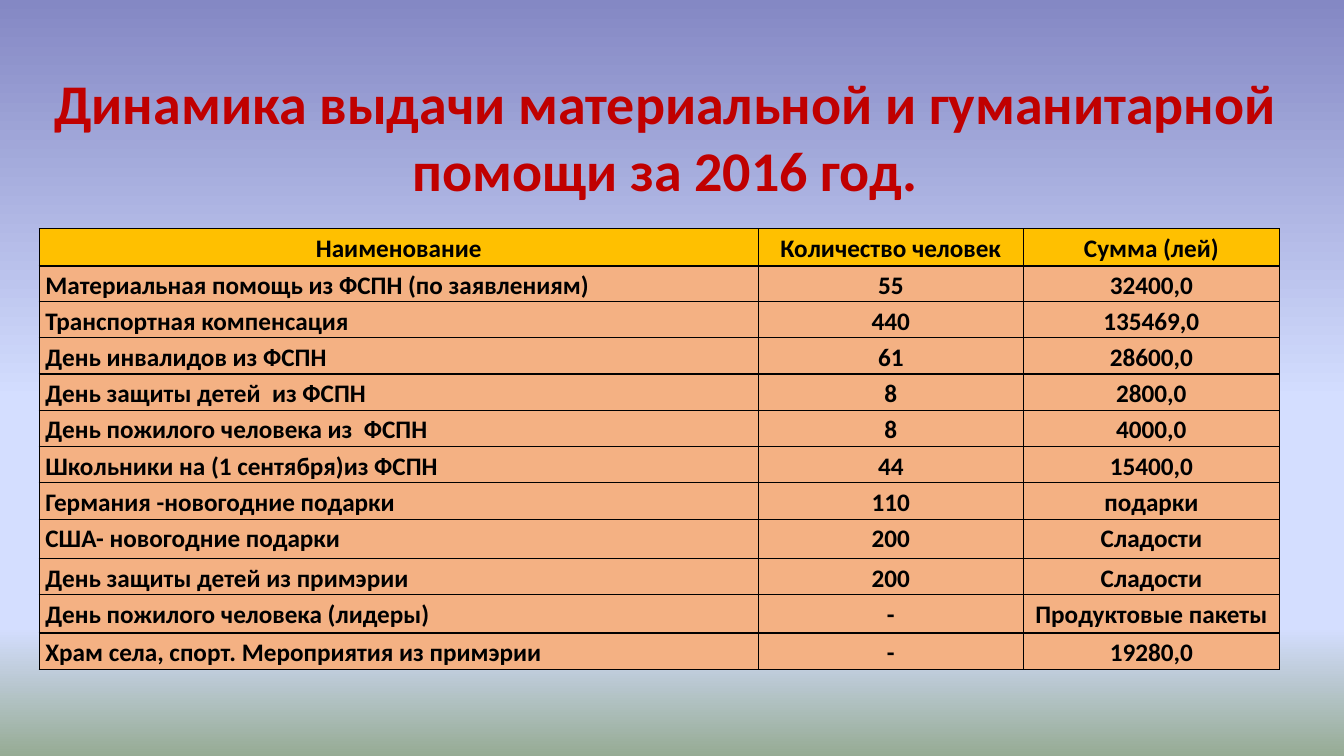
from dataclasses import dataclass
from typing import NamedTuple

from lxml.etree import SubElement
from pptx import Presentation
from pptx.dml.color import RGBColor
from pptx.enum.text import MSO_AUTO_SIZE as AutoSize, PP_ALIGN as Align
from pptx.oxml.ns import qn
from pptx.util import Inches, Pt


@dataclass(frozen=True)
class Theme:
    font: str = "Calibri"
    title_size: int = 40
    table_size: int = 18
    title: str = "C00000"
    title_outline: str = "525252"
    ink: str = "000000"
    header_fill: str = "FFC000"
    body_fill: str = "F4B183"
    sky: tuple = ((0, "8488C4"), (53, "D4DEFF"), (83, "D4DEFF"), (100, "96AB94"))


class AidRow(NamedTuple):
    name: str
    people: str
    amount: str
    height: float = 0.36


THEME = Theme()
TITLE = "Динамика выдачи материальной и гуманитарной помощи за 2016 год."
COLUMN_WIDTHS = (7.13, 2.63, 2.54)
AID_ROWS = (
    AidRow("Наименование", "Количество человек", "Сумма (лей)", 0.37),
    AidRow("Материальная помощь из ФСПН (по заявлениям)", "55", "32400,0", 0.33),
    AidRow("Транспортная компенсация", "440", "135469,0"),
    AidRow("День инвалидов из ФСПН", "61", "28600,0"),
    AidRow("День защиты детей  из ФСПН", "8", "2800,0"),
    AidRow("День пожилого человека из  ФСПН", "8", "4000,0"),
    AidRow("Школьники на (1 сентября)из ФСПН", "44", "15400,0"),
    AidRow("Германия -новогодние подарки", "110", "подарки"),
    AidRow("США- новогодние подарки", "200", "Сладости", 0.39),
    AidRow("День защиты детей из примэрии", "200", "Сладости"),
    AidRow("День пожилого человека (лидеры)", "-", "Продуктовые пакеты", 0.38),
    AidRow("Храм села, спорт. Мероприятия из примэрии", "-", "19280,0"),
)


def write(frame, text: str, *, size: int, color: str, align=None, spacing=None):
    """Put one bold paragraph into a text frame and return its run."""
    paragraph = frame.paragraphs[0]
    paragraph.alignment = align
    paragraph.line_spacing = spacing
    run = paragraph.add_run()
    run.text = text
    run.font.name = THEME.font
    run.font.size = Pt(size)
    run.font.bold = True
    run.font.color.rgb = RGBColor.from_string(color)
    return run


def add_line(properties, tag: str, position: int, color: str) -> None:
    """Insert a solid one-point line into cell or run properties."""
    line = SubElement(properties, qn(tag), w=str(Pt(1)))
    SubElement(SubElement(line, qn("a:solidFill")), qn("a:srgbClr"), val=color)
    properties.insert(position, line)


def paint_background(slide) -> None:
    fill = slide.background.fill
    fill.gradient()
    fill.gradient_angle = 270
    stops = next(slide.element.iter(qn("a:gsLst")))
    stops.clear()
    for percent, color in THEME.sky:
        stop = SubElement(stops, qn("a:gs"), pos=str(percent * 1000))
        SubElement(stop, qn("a:srgbClr"), val=color)


def add_title(slide) -> None:
    title = slide.shapes.add_textbox(Inches(0.3), Inches(0.63), Inches(12.59), Inches(1.45))
    frame = title.text_frame
    frame.word_wrap = True
    frame.auto_size = AutoSize.SHAPE_TO_FIT_TEXT
    run = write(frame, TITLE, size=THEME.title_size, color=THEME.title, align=Align.CENTER)
    add_line(run.font.fill._xPr, "a:ln", 0, THEME.title_outline)


def format_cell(cell, text: str, fill: str, align) -> None:
    cell.margin_left = cell.margin_right = Inches(0.06)
    cell.margin_top = cell.margin_bottom = 0
    cell.fill.solid()
    cell.fill.fore_color.rgb = RGBColor.from_string(fill)
    write(cell.text_frame, text, size=THEME.table_size, color=THEME.ink,
          align=align, spacing=1.15)
    for position, tag in enumerate(("a:lnL", "a:lnR", "a:lnT", "a:lnB")):
        add_line(cell._tc.tcPr, tag, position, THEME.ink)


def add_aid_table(slide) -> None:
    table = slide.shapes.add_table(
        len(AID_ROWS), len(COLUMN_WIDTHS), Inches(0.39), Inches(2.27),
        Inches(sum(COLUMN_WIDTHS)), Inches(sum(row.height for row in AID_ROWS)),
    ).table
    table.horz_banding = False
    for column, width in zip(table.columns, COLUMN_WIDTHS):
        column.width = Inches(width)
    for r, aid in enumerate(AID_ROWS):
        table.rows[r].height = Inches(aid.height)
        fill = THEME.body_fill if r else THEME.header_fill
        for c, text in enumerate((aid.name, aid.people, aid.amount)):
            # Only the names below the header are set flush left
            align = Align.LEFT if r and c == 0 else Align.CENTER
            format_cell(table.cell(r, c), text, fill, align)


def main() -> None:
    deck = Presentation()
    deck.slide_width, deck.slide_height = Inches(13.33), Inches(7.5)
    slide = deck.slides.add_slide(deck.slide_layouts[6])
    paint_background(slide)
    add_aid_table(slide)
    add_title(slide)
    deck.save("out.pptx")


if __name__ == "__main__":
    main()
